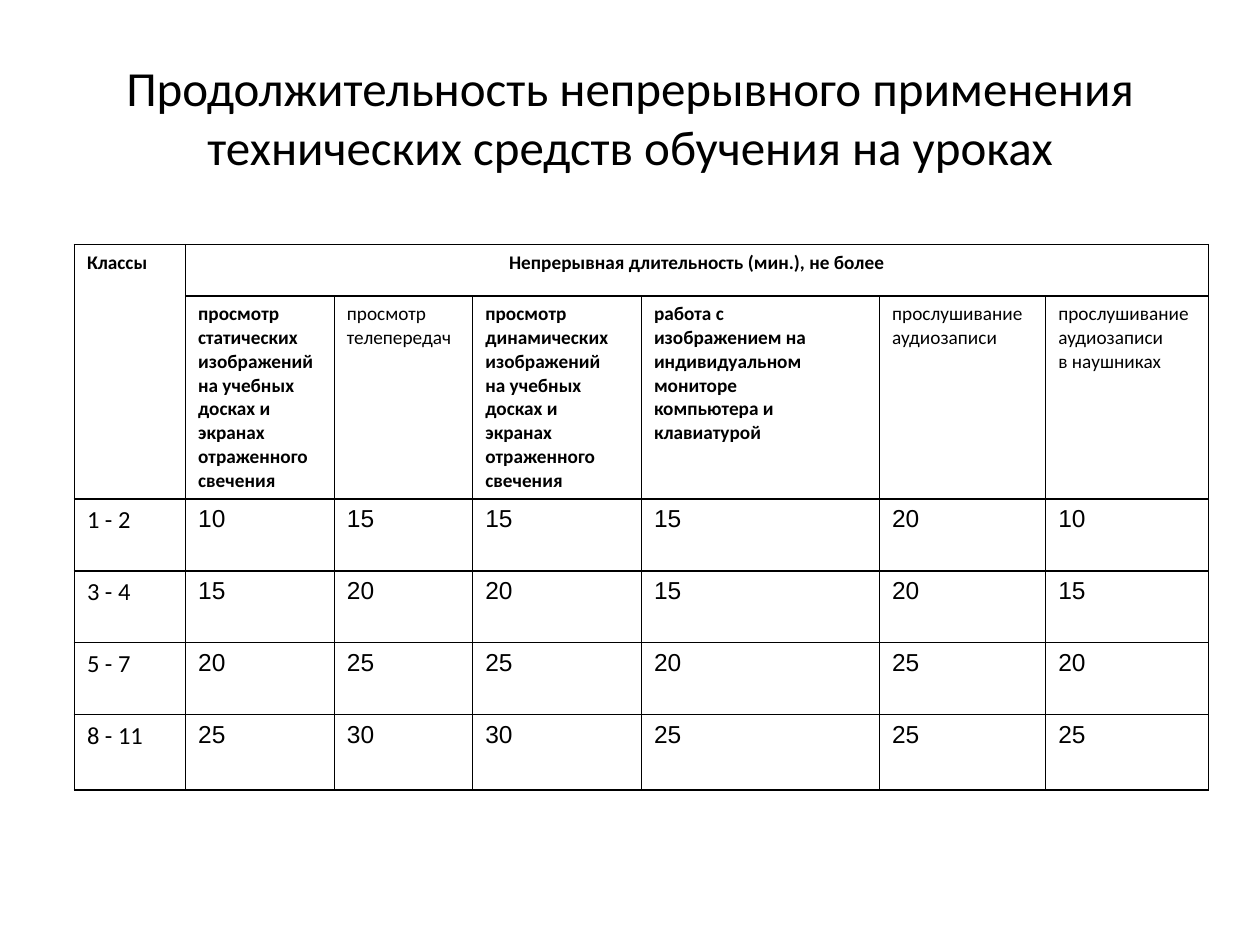
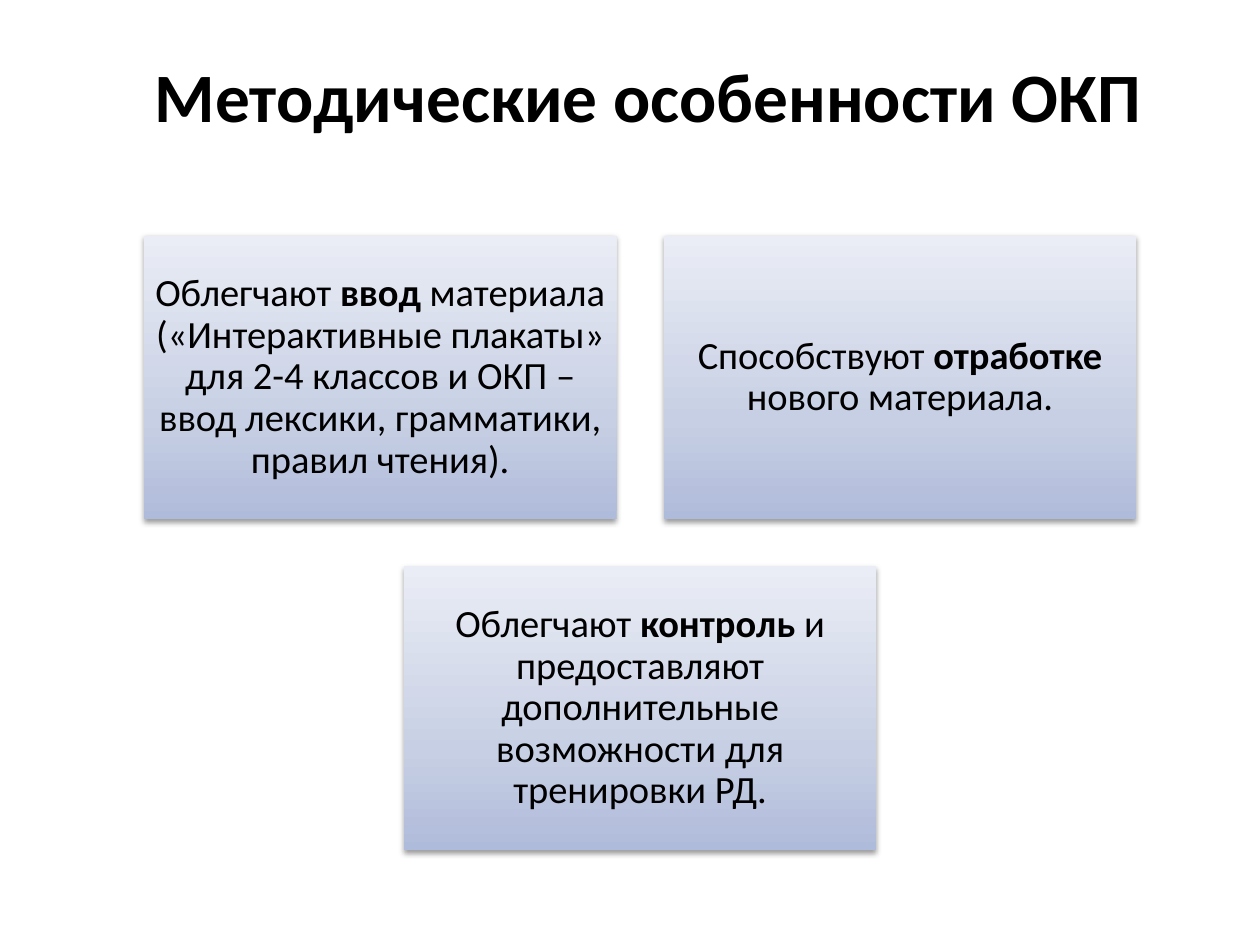
from copy import deepcopy

from lxml.etree import SubElement
from pptx import Presentation
from pptx.dml.color import RGBColor
from pptx.enum.shapes import MSO_SHAPE
from pptx.enum.text import MSO_ANCHOR, MSO_AUTO_SIZE, PP_ALIGN
from pptx.oxml.ns import qn
from pptx.util import Cm, Pt

COLORS = {
    "text": "000000",
    "border": "000000",
    "shadow": "000000",
    "card_bottom": "AFBBDA",
    "card_middle": "C7CFE4",
    "card_top": "EAEDF5",
}
CARD_STOPS = [(0, "card_bottom"), (0.35, "card_middle"), (1, "card_top")]
TITLE_ONLY = 5

HEADING = {"name": "Calibri", "size": Pt(28), "bold": False}
BIG_HEADING = {"name": "Calibri", "size": Pt(39.6), "bold": True}
HEADER_BOLD = {"name": "Calibri", "size": Pt(11), "bold": True}
HEADER_PLAIN = {**HEADER_BOLD, "bold": False}
GRADE_LABEL = {"name": "Calibri", "size": Pt(14), "bold": False}
MINUTES = {**GRADE_LABEL, "name": "Arial"}
CARD_TEXT = {"name": "Calibri", "size": Pt(22), "bold": False}
CARD_KEYWORD = {**CARD_TEXT, "bold": True}

COLUMN_WIDTHS = [2.24, 3, 2.79, 3.4, 4.8, 3.35, 3.28]
ROW_HEIGHTS = [1.04, 3.99, 1.45, 1.45, 1.45, 1.52]
BOARD_VIEWING = "изображений\nна учебных\nдосках и\nэкранах\nотраженного\nсвечения"
ACTIVITIES = [
    ("просмотр\nстатических\n" + BOARD_VIEWING, HEADER_BOLD),
    ("просмотр\nтелепередач", HEADER_PLAIN),
    ("просмотр\nдинамических\n" + BOARD_VIEWING, HEADER_BOLD),
    ("работа с\nизображением на\nиндивидуальном\nмониторе\nкомпьютера и клавиатурой", HEADER_BOLD),
    ("прослушивание\nаудиозаписи", HEADER_PLAIN),
    ("прослушивание\nаудиозаписи\nв наушниках", HEADER_PLAIN),
]
DURATIONS = {
    "1 - 2": [10, 15, 15, 15, 20, 10],
    "3 - 4": [15, 20, 20, 15, 20, 15],
    "5 - 7": [20, 25, 25, 20, 25, 20],
    "8 - 11": [25, 30, 30, 25, 25, 25],
}

CARD_WIDTH, CARD_HEIGHT, CARD_GAP = 9.53, 5.72, 0.95
CARD_ROWS = [
    [
        ("Облегчают ", "ввод",
         " материала («Интерактивные плакаты» для 2-4 классов и ОКП – "
         "ввод лексики, грамматики, правил чтения)."),
        ("Способствуют ", "отработке", " нового материала."),
    ],
    [
        ("Облегчают ", "контроль",
         " и предоставляют дополнительные возможности для тренировки РД."),
    ],
]


def format_span(span, style):
    for name, value in style.items():
        setattr(span.font, name, value)
    span.font.color.rgb = RGBColor.from_string(COLORS["text"])


def write_lines(para, text, style, align=PP_ALIGN.LEFT):
    """Write text whose line breaks carry the same format as its words."""
    para.text = text
    para.alignment = align
    for span in para.runs:
        format_span(span, style)
    for line_break in para._p.findall(qn("a:br")):
        line_break.append(deepcopy(para.runs[0]._r.rPr))


def add_titled_page(deck, title, style, box):
    page = deck.slides.add_slide(deck.slide_layouts[TITLE_ONLY])
    holder = page.shapes.title
    holder.left, holder.top, holder.width, holder.height = map(Cm, box)
    frame = holder.text_frame
    frame.auto_size = MSO_AUTO_SIZE.NONE
    frame.vertical_anchor = MSO_ANCHOR.MIDDLE
    write_lines(frame.paragraphs[0], title, style, PP_ALIGN.CENTER)
    return page


def outline_cell(cell):
    properties = cell._tc.get_or_add_tcPr()
    for side in ("lnL", "lnR", "lnT", "lnB"):
        line = SubElement(properties, qn(f"a:{side}"), w=str(Pt(1)))
        fill = SubElement(line, qn("a:solidFill"))
        SubElement(fill, qn("a:srgbClr"), val=COLORS["border"])
    cell.fill.background()


def add_duration_table(page, left, top):
    table = page.shapes.add_table(
        len(ROW_HEIGHTS), len(COLUMN_WIDTHS), Cm(left), Cm(top),
        Cm(sum(COLUMN_WIDTHS)), Cm(sum(ROW_HEIGHTS))).table
    table.first_row = table.horz_banding = False
    for column, width in zip(table.columns, COLUMN_WIDTHS):
        column.width = Cm(width)
    for row, height in zip(table.rows, ROW_HEIGHTS):
        row.height = Cm(height)
    for cell in table.iter_cells():
        outline_cell(cell)

    def fill_cell(row, column, text, style, align=PP_ALIGN.LEFT):
        para = table.cell(row, column).text_frame.paragraphs[0]
        write_lines(para, text, style, align)

    table.cell(0, 0).merge(table.cell(1, 0))
    table.cell(0, 1).merge(table.cell(0, len(ACTIVITIES)))
    fill_cell(0, 0, "Классы", HEADER_BOLD)
    fill_cell(0, 1, "Непрерывная длительность (мин.), не более",
              HEADER_BOLD, PP_ALIGN.CENTER)
    for column, (activity, style) in enumerate(ACTIVITIES, start=1):
        fill_cell(1, column, activity, style)
    for row, (grades, minutes) in enumerate(DURATIONS.items(), start=2):
        fill_cell(row, 0, grades, GRADE_LABEL)
        for column, value in enumerate(minutes, start=1):
            fill_cell(row, column, str(value), MINUTES)


def shade_card(card):
    """Give the card its three-colour gradient and soft shadow below."""
    card.line.fill.background()
    card.fill.gradient()
    card.fill.gradient_angle = 90
    stop_list = card._element.spPr.find(".//" + qn("a:gsLst"))
    stop_list.append(deepcopy(stop_list[-1]))
    for stop, (position, color) in zip(card.fill.gradient_stops, CARD_STOPS):
        stop.position = position
        stop.color.rgb = RGBColor.from_string(COLORS[color])

    card.shadow.inherit = False
    effects = card._element.spPr.find(qn("a:effectLst"))
    shadow = SubElement(effects, qn("a:outerShdw"), blurRad=str(Pt(3.1)),
                        dist=str(Pt(1.6)), dir="5400000", rotWithShape="0")
    color = SubElement(shadow, qn("a:srgbClr"), val=COLORS["shadow"])
    SubElement(color, qn("a:alpha"), val="38000")


def add_card(page, left, top, parts):
    card = page.shapes.add_shape(MSO_SHAPE.RECTANGLE, Cm(left), Cm(top),
                                 Cm(CARD_WIDTH), Cm(CARD_HEIGHT))
    shade_card(card)
    frame = card.text_frame
    frame.word_wrap = True
    frame.vertical_anchor = MSO_ANCHOR.MIDDLE
    for side in ("left", "right", "top", "bottom"):
        setattr(frame, f"margin_{side}", Cm(0.23))
    para = frame.paragraphs[0]
    para.alignment = PP_ALIGN.CENTER
    para.line_spacing = 0.9
    for text, style in zip(parts, (CARD_TEXT, CARD_KEYWORD, CARD_TEXT)):
        span = para.add_run()
        span.text = text
        format_span(span, style)


def add_card_rows(page, left, top, width):
    """Stack the rows of cards, each row centred in the given width."""
    for row, cards in enumerate(CARD_ROWS):
        row_width = len(cards) * (CARD_WIDTH + CARD_GAP) - CARD_GAP
        row_left = left + (width - row_width) / 2
        for column, parts in enumerate(cards):
            add_card(page, row_left + column * (CARD_WIDTH + CARD_GAP),
                     top + row * (CARD_HEIGHT + CARD_GAP), parts)


def main():
    deck = Presentation()
    deck.slide_width, deck.slide_height = Cm(25.4), Cm(19.05)

    durations = add_titled_page(
        deck, "Продолжительность непрерывного применения "
        "технических средств обучения на уроках",
        HEADING, (1.27, 0.76, 22.86, 3.18))
    add_duration_table(durations, 1.5, 4.93)

    features = add_titled_page(deck, "Методические особенности ОКП",
                               BIG_HEADING, (2.69, 0.33, 20.75, 3.18))
    add_card_rows(features, 2.9, 4.75, 20.01)

    deck.save("out.pptx")


if __name__ == "__main__":
    main()
